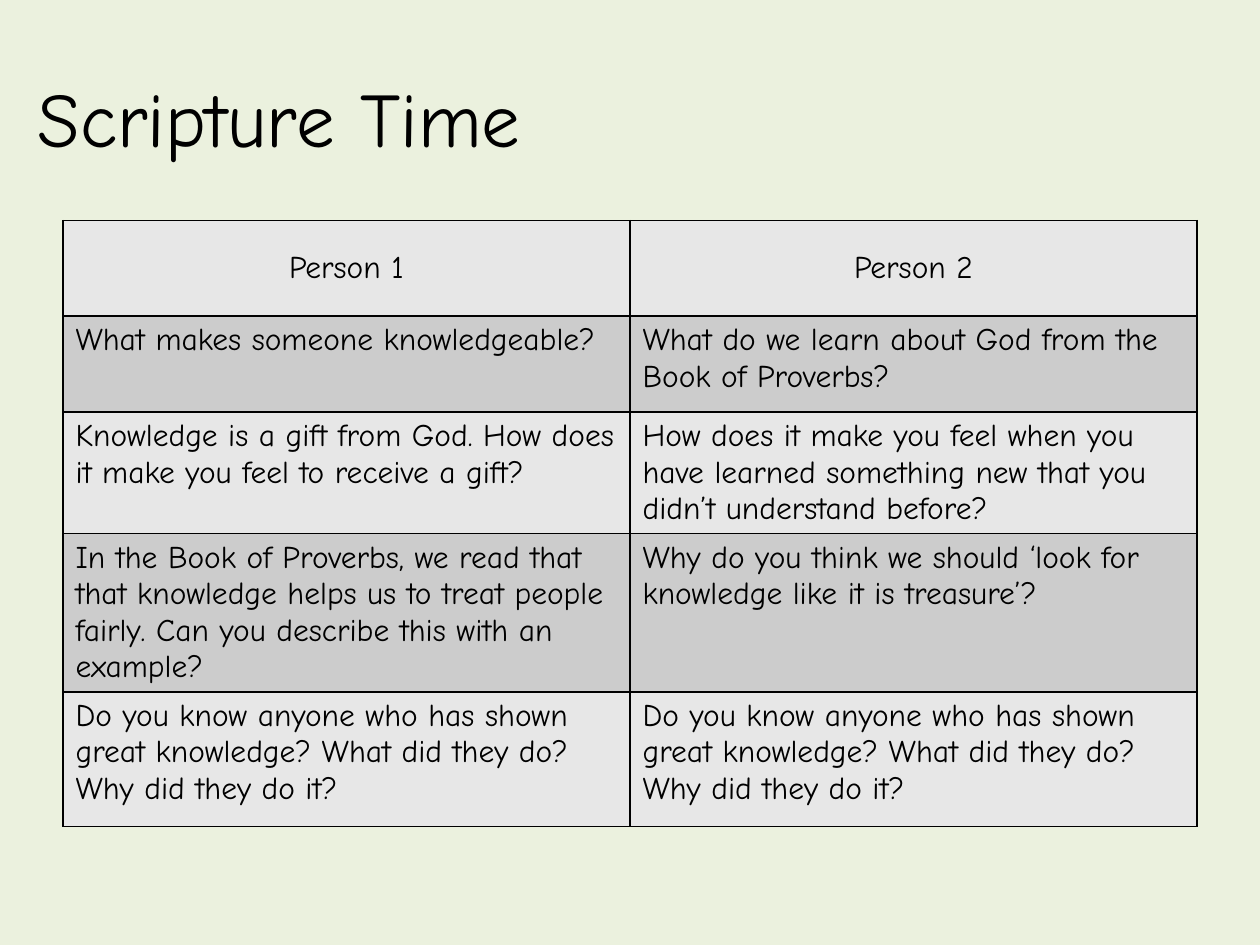
"""Build the Scripture Time slide with its table of questions for two people."""
from lxml import etree
from pptx import Presentation
from pptx.dml.color import RGBColor
from pptx.enum.text import MSO_ANCHOR, PP_ALIGN
from pptx.oxml.ns import qn
from pptx.util import Inches, Pt

MIDDLE, TOP = MSO_ANCHOR.MIDDLE, MSO_ANCHOR.TOP
LEFT, CENTER = PP_ALIGN.LEFT, PP_ALIGN.CENTER
FONT = "Comic Neue"
BLACK = "000000"
ROWS = [
    (0.76, "E7E7E7", "Person 1", "Person 2"),
    (0.76, "CCCCCC", "What makes someone knowledgeable?",
     "What do we learn about God from the Book of Proverbs?"),
    (0.66, "E7E7E7",
     "Knowledge is a gift from God. How does it make you feel to receive a gift?",
     "How does it make you feel when you have learned something new that you "
     "didn’t understand before?"),
    (0.76, "CCCCCC",
     "In the Book of Proverbs, we read that that knowledge helps us to treat "
     "people fairly. Can you describe this with an example?",
     "Why do you think we should ‘look for knowledge like it is treasure’?"),
    (1.07, "E7E7E7",
     "Do you know anyone who has shown great knowledge? What did they do? "
     "Why did they do it?",
     "Do you know anyone who has shown great knowledge? What did they do? "
     "Why did they do it?"),
]


def paint(fill, color):
    """Give a fill one solid colour."""
    fill.solid()
    fill.fore_color.rgb = RGBColor.from_string(color)


def write(frame, text, size, align):
    """Put one formatted run in the first paragraph of a frame."""
    para = frame.paragraphs[0]
    para.alignment = align
    run = para.add_run()
    run.text = text
    run.font.name = FONT
    run.font.size = Pt(size)
    run.font.bold = False
    paint(run.font.fill, BLACK)


deck = Presentation()
deck.slide_width, deck.slide_height = Inches(10), Inches(7.5)
slide = deck.slides.add_slide(deck.slide_layouts[5])
paint(slide.background.fill, "EBF1DE")

title = slide.shapes.title
title.left, title.top = Inches(0.2), Inches(0.3)
title.width, title.height = Inches(9.3), Inches(1.25)
title.text_frame.vertical_anchor = MIDDLE
write(title.text_frame, "Scripture Time", 44, LEFT)

height = sum(row[0] for row in ROWS)
table = slide.shapes.add_table(
    len(ROWS), 2, Inches(0.5), Inches(1.75), Inches(9), Inches(height)).table
for r, (tall, shade, *texts) in enumerate(ROWS):
    table.rows[r].height = Inches(tall)
    for c, text in enumerate(texts):
        cell = table.cell(r, c)
        cell.vertical_anchor = TOP if r else MIDDLE
        write(cell.text_frame, text, 18, LEFT if r else CENTER)
        props = cell._tc.get_or_add_tcPr()
        for side in ("lnL", "lnR", "lnT", "lnB"):
            line = etree.SubElement(props, qn(f"a:{side}"), w=str(Pt(1)))
            solid = etree.SubElement(line, qn("a:solidFill"))
            etree.SubElement(solid, qn("a:srgbClr"), val=BLACK)
        paint(cell.fill, shade)

deck.save("out.pptx")
